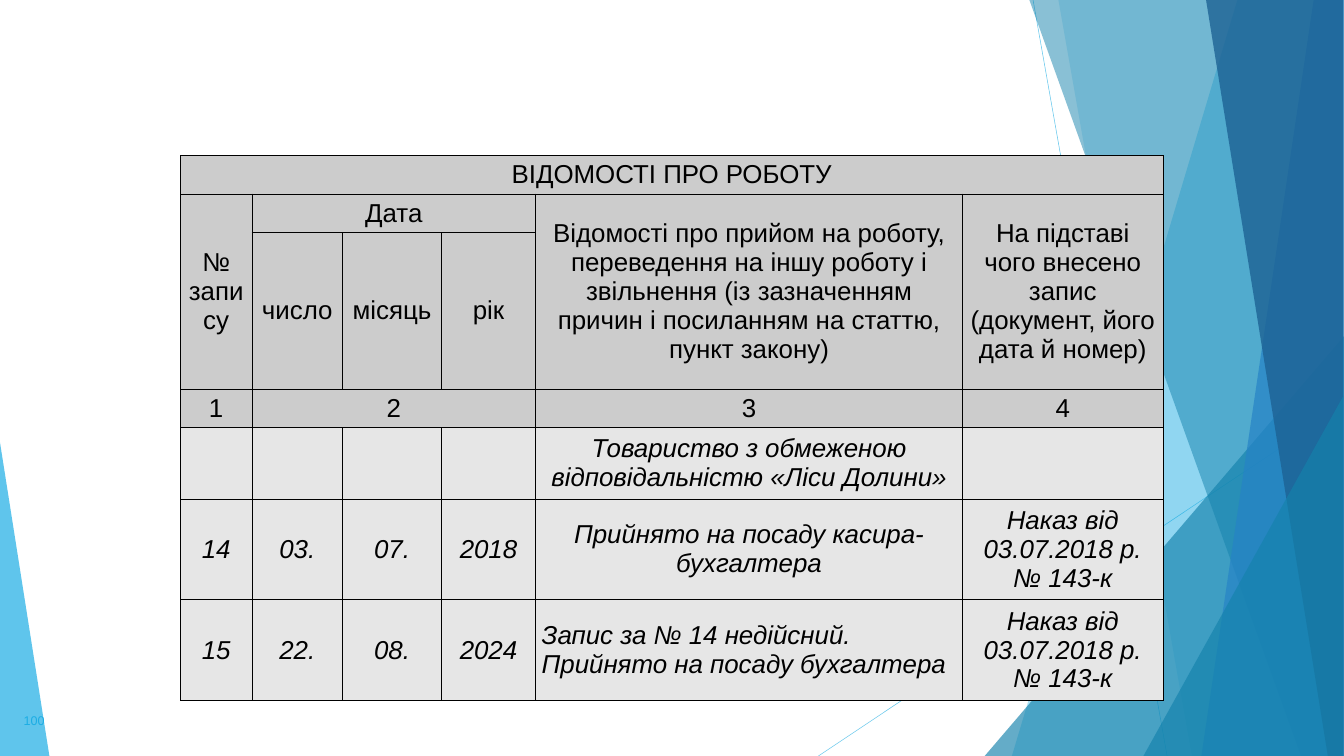
from lxml import etree
from pptx import Presentation
from pptx import util as u
from pptx.dml.color import RGBColor
from pptx.enum import shapes, text
from pptx.oxml import parse_xml
from pptx.oxml.ns import qn

PX = 9144
NS = "http://schemas.openxmlformats.org/drawingml/2006/main"
FONT = {"name": "Arial", "size": u.Pt(37)}
INSET = {"margin_left": 12, "margin_right": 12, "margin_top": 7, "margin_bottom": 7}
HEAD, BODY = "CCCCCC", "E6E6E6"

LINES = [(2050, 0, 2316, 1500), (2666, 805, 1624, 1500)]
BANDS = [
    ([(2456, -2), (2666, -2), (2666, 1500), (2008, 1500)], "1CADE4", 36),
    ([(2100, -2), (2667, -2), (2667, 1500), (2365, 1500)], "1CADE4", 20),
    ([(2042, -2), (2666, -2), (2666, 1500), (2582, 1500)], "1482AC", 50),
    ([(2607, -2), (2666, -2), (2666, 1500), (2384, 1500)], "2683C6", 70),
    ([(2393, -2), (2666, -2), (2666, 1500), (2635, 1500)], "1D6294", 80),
]
WEDGES = [
    ((1954, 667, 713, 833), 1, "1482AC", 66),
    ((2269, 785, 397, 715), 1, "1482AC", 66),
    ((0, 878, 98, 622), 0, "1CADE4", 70),
]
COLS = [142, 180, 196, 187, 847, 398]
ROWS = [76, 76, 311, 76, 142, 200, 200]
SPANS = [(0, 0, 0, 5), (1, 0, 2, 0), (1, 1, 1, 3), (1, 4, 2, 4), (1, 5, 2, 5), (3, 1, 3, 3)]
ORDER = "Наказ від 03.07.2018 р. № 143-к"
CELLS = [
    ["ВІДОМОСТІ ПРО РОБОТУ", "", "", "", "", ""],
    ["№\nзапису", "Дата", "", "",
     "Відомості про прийом на роботу, переведення на іншу роботу і звільнення "
     "(із зазначенням причин і посиланням на статтю, пункт закону)",
     "На підставі чого внесено запис (документ, його дата й номер)"],
    ["", "число", "місяць", "рік", "", ""],
    ["1", "2", "", "", "3", "4"],
    ["", "", "", "", "Товариство з обмеженою відповідальністю «Ліси Долини»", ""],
    ["14", "03.", "07.", "2018", "Прийнято на посаду касира-бухгалтера", ORDER],
    ["15", "22.", "08.", "2024",
     "Запис за № 14 недійсний.\nПрийнято на посаду бухгалтера", ORDER],
]


def tint(code):
    return RGBColor.from_string(code)


def apply(obj, vals):
    for key, val in vals.items():
        setattr(obj, key, val)


def fade(props, alpha):
    node = props.find(".//" + qn("a:srgbClr"))
    etree.SubElement(node, qn("a:alpha")).set("val", str(alpha * 1000))


class Page:
    """Holds the style and the current slide, and draws each kind of element."""

    def __init__(self, deck):
        self.slide = deck.slides.add_slide(deck.slide_layouts[6])
        self.items = self.slide.shapes

    def line(self, ends, color, alpha):
        link = self.items.add_connector(
            shapes.MSO_CONNECTOR.STRAIGHT, *[n * PX for n in ends])
        link.line.width = u.Pt(0.75)
        link.line.color.rgb = tint(color)
        props = link._element.spPr
        fade(props, alpha)
        etree.SubElement(props, qn("a:effectLst"))

    def paint(self, shape, color, alpha):
        shape.shadow.inherit = False
        shape.line.fill.background()
        shape.fill.solid()
        shape.fill.fore_color.rgb = tint(color)
        fade(shape._element.spPr, alpha)

    def band(self, points, color, alpha):
        pen = self.items.build_freeform(*points[0], scale=PX)
        pen.add_line_segments(points[1:], close=True)
        self.paint(pen.convert_to_shape(), color, alpha)

    def wedge(self, box, apex, color, alpha):
        shape = self.items.add_shape(
            shapes.MSO_SHAPE.ISOSCELES_TRIANGLE, *[n * PX for n in box])
        shape.adjustments[0] = apex
        self.paint(shape, color, alpha)

    def label(self, box, words, size, color):
        frame = self.items.add_textbox(*[n * PX for n in box]).text_frame
        apply(frame, {"word_wrap": True, "vertical_anchor": text.MSO_ANCHOR.MIDDLE})
        frame.text = words
        font = frame.paragraphs[0].runs[0].font
        apply(font, {"name": "Arial", "size": u.Pt(size)})
        font.color.rgb = tint(color)

    def table(self, left, top):
        box = [left, top, sum(COLS), sum(ROWS)]
        grid = self.items.add_table(len(ROWS), len(COLS), *[n * PX for n in box]).table
        apply(grid, {"first_row": False, "horz_banding": False})
        for col, wide in zip(grid.columns, COLS):
            col.width = wide * PX
        for row, high in zip(grid.rows, ROWS):
            row.height = high * PX
        for r, row in enumerate(CELLS):
            for c, words in enumerate(row):
                side = text.PP_ALIGN.LEFT if (r, c) == (6, 4) else text.PP_ALIGN.CENTER
                self.cell(grid.cell(r, c), words, r > 3, side)
        for r, c, low, last in SPANS:
            grid.cell(r, c).merge(grid.cell(low, last))

    def cell(self, cell, words, body, side):
        cell.text = words
        apply(cell, {key: val * PX for key, val in INSET.items()})
        cell.vertical_anchor = text.MSO_ANCHOR.MIDDLE
        cell.fill.solid()
        cell.fill.fore_color.rgb = tint(BODY if body else HEAD)
        for para in cell.text_frame.paragraphs:
            para.alignment = side
            for run in para.runs:
                apply(run.font, {**FONT, "italic": body})
                run.font.color.rgb = tint("000000")
        props = cell._tc.get_or_add_tcPr()
        for i, edge in enumerate("LRTB"):
            props.insert(i, parse_xml(
                f'<a:ln{edge} xmlns:a="{NS}" w="12700"><a:solidFill>'
                f'<a:srgbClr val="000000"/></a:solidFill></a:ln{edge}>'))


def main():
    deck = Presentation()
    apply(deck, {"slide_width": 2667 * PX, "slide_height": 1500 * PX})
    page = Page(deck)
    for ends in LINES:
        page.line(ends, "1CADE4", 70)
    for band in BANDS[:2]:
        page.band(*band)
    page.wedge(*WEDGES[0])
    for band in BANDS[2:]:
        page.band(*band)
    for wedge in WEDGES[1:]:
        page.wedge(*wedge)
    page.label((37, 1390, 115, 80), "100", 18, "1CADE4")
    page.table(358, 309)
    deck.save("out.pptx")


if __name__ == "__main__":
    main()
